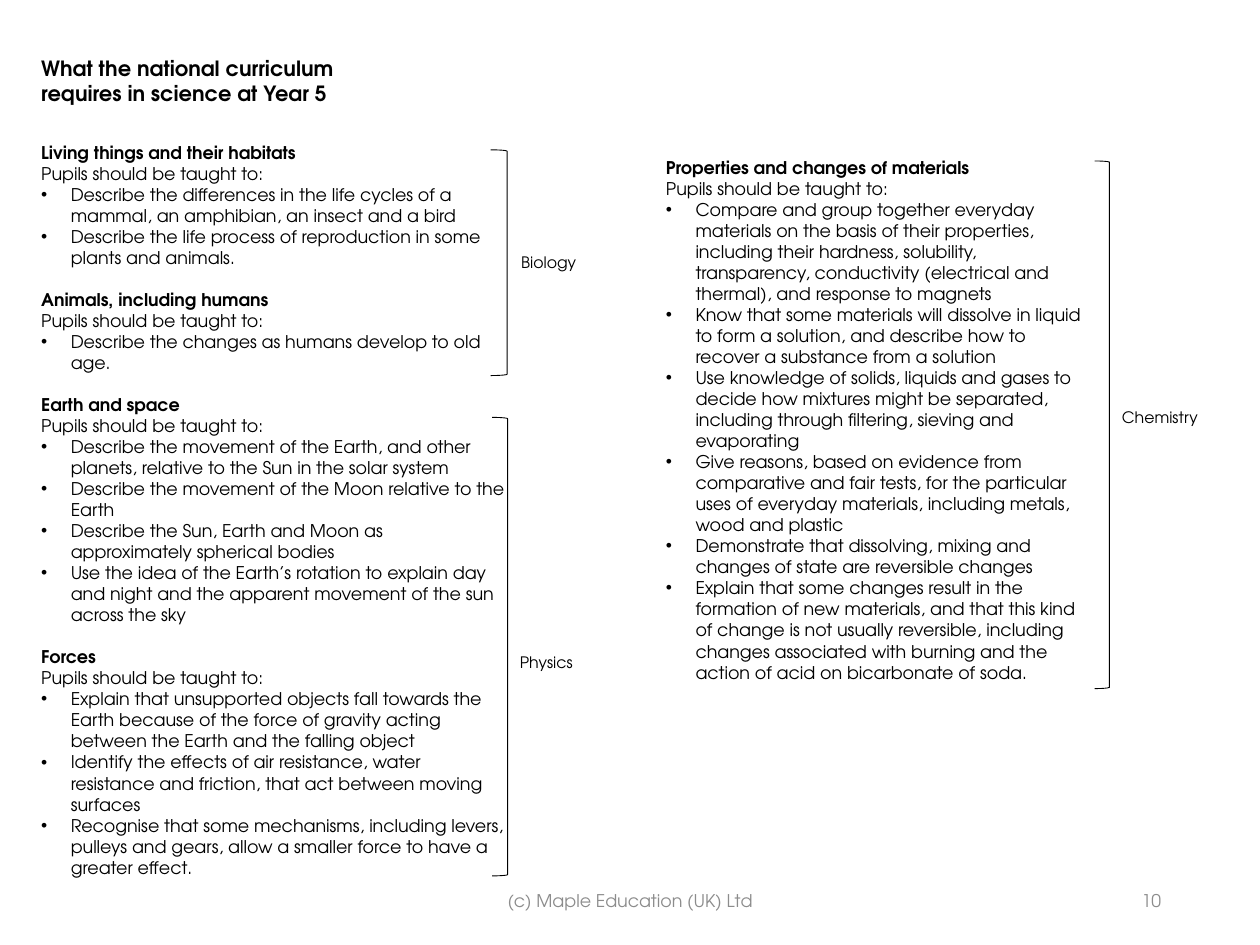
from lxml import etree
from pptx import Presentation
from pptx.dml.color import RGBColor
from pptx.enum import shapes, text
from pptx.oxml import ns
from pptx.util import Pt

FONT = "TeX Gyre Adventor"
BLACK = RGBColor(0x00, 0x00, 0x00)
GREY = RGBColor(0x8C, 0x8C, 0x8C)
INDENT = Pt(16.9)
INTRO = "Pupils should be taught to:"

prs = Presentation()
prs.slide_width, prs.slide_height = Pt(720), Pt(540)
slide = prs.slides.add_slide(prs.slide_layouts[6])


def add_frame(left, top, width, height):
    frame = slide.shapes.add_textbox(Pt(left), Pt(top), Pt(width), Pt(height)).text_frame
    frame.word_wrap = True
    return frame


def write(frame, words, size=10, bold=False, color=BLACK, bullet=False, before=0):
    line = frame.paragraphs[0]
    if line.text:
        line = frame.add_paragraph()
    line.text = words
    line.space_before = Pt(before)
    font = line.runs[0].font
    font.name, font.size, font.bold = FONT, Pt(size), bold
    font.color.rgb = color
    if bullet:
        props = line._p.get_or_add_pPr()
        props.set("marL", str(INDENT))
        props.set("indent", str(-INDENT))
        etree.SubElement(props, ns.qn("a:buFont")).set("typeface", "Arial")
        etree.SubElement(props, ns.qn("a:buChar")).set("char", "•")
    return line


# Programme of study: (topic, gap above, requirements)
left_topics = [
    ("Living things and their habitats", 20.6, [
        "Describe the differences in the life cycles of a mammal, an amphibian, an insect and a bird",
        "Describe the life process of reproduction in some plants and animals.",
    ]),
    ("Animals, including humans", 12, [
        "Describe the changes as humans develop to old age.",
    ]),
    ("Earth and space", 12, [
        "Describe the movement of the Earth, and other planets, relative to the Sun in the solar system",
        "Describe the movement of the Moon relative to the Earth",
        "Describe the Sun, Earth and Moon as approximately spherical bodies",
        "Use the idea of the Earth’s rotation to explain day and night and the apparent "
        "movement of the sun across the sky",
    ]),
    ("Forces", 12, [
        "Explain that unsupported objects fall towards the Earth because of the force of "
        "gravity acting between the Earth and the falling object",
        "Identify the effects of air resistance, water resistance and friction, that act "
        "between moving surfaces",
        "Recognise that some mechanisms, including levers, pulleys and gears, allow a smaller "
        "force to have a greater effect.",
    ]),
]
right_topics = [
    ("Properties and changes of materials", 0, [
        "Compare and group together everyday materials on the basis of their properties, "
        "including their hardness, solubility, transparency, conductivity (electrical and "
        "thermal), and response to magnets",
        "Know that some materials will dissolve in liquid to form a solution, and describe "
        "how to recover a substance from a solution",
        "Use knowledge of solids, liquids and gases to decide how mixtures might be "
        "separated, including through filtering, sieving and evaporating",
        "Give reasons, based on evidence from comparative and fair tests, for the particular "
        "uses of everyday materials, including metals, wood and plastic",
        "Demonstrate that dissolving, mixing and changes of state are reversible changes",
        "Explain that some changes result in the formation of new materials, and that this "
        "kind of change is not usually reversible, including changes associated with burning "
        "and the action of acid on bicarbonate of soda.",
    ]),
]

# Two columns, the left one opening with the title
left_column = add_frame(16.5, 28, 279.5, 511)
for title_line in ("What the national curriculum", "requires in science at Year 5"):
    write(left_column, title_line, size=12, bold=True)

right_column = add_frame(373.5, 62, 252, 344)
right_column.margin_top = Pt(27.6)

for column, topics in ((left_column, left_topics), (right_column, right_topics)):
    column.auto_size = text.MSO_AUTO_SIZE.SHAPE_TO_FIT_TEXT
    for topic, gap, requirements in topics:
        write(column, topic, bold=True, before=gap)
        write(column, INTRO)
        for requirement in requirements:
            write(column, requirement, bullet=True)

# Subject brackets and their labels: bracket box, then label corner
subjects = [
    ("Biology", (280.3, 85.6, 9.5, 129), (290.7, 141)),
    ("Physics", (281.3, 238.5, 8.8, 262), (290, 369.5)),
    ("Chemistry", (625.5, 92, 8.5, 301.5), (634, 229.5)),
]
for subject, box, (label_left, label_top) in subjects:
    bracket = slide.shapes.add_shape(
        shapes.MSO_SHAPE.RIGHT_BRACKET, *[Pt(length) for length in box])
    bracket.shadow.inherit = False
    bracket.fill.background()
    bracket.line.color.rgb = BLACK
    bracket.line.width = Pt(0.5)
    label = add_frame(label_left, label_top, 63, 18)
    label.auto_size = text.MSO_AUTO_SIZE.SHAPE_TO_FIT_TEXT
    write(label, subject, size=9)

# Footer and page number
for words, left, width, align in (
    ("(c) Maple Education (UK) Ltd", 238.5, 243, text.PP_ALIGN.CENTER),
    ("10", 508.5, 162, text.PP_ALIGN.RIGHT),
):
    footer = add_frame(left, 500.5, width, 28.75)
    footer.vertical_anchor = text.MSO_ANCHOR.MIDDLE
    write(footer, words, color=GREY).alignment = align

prs.save("out.pptx")
